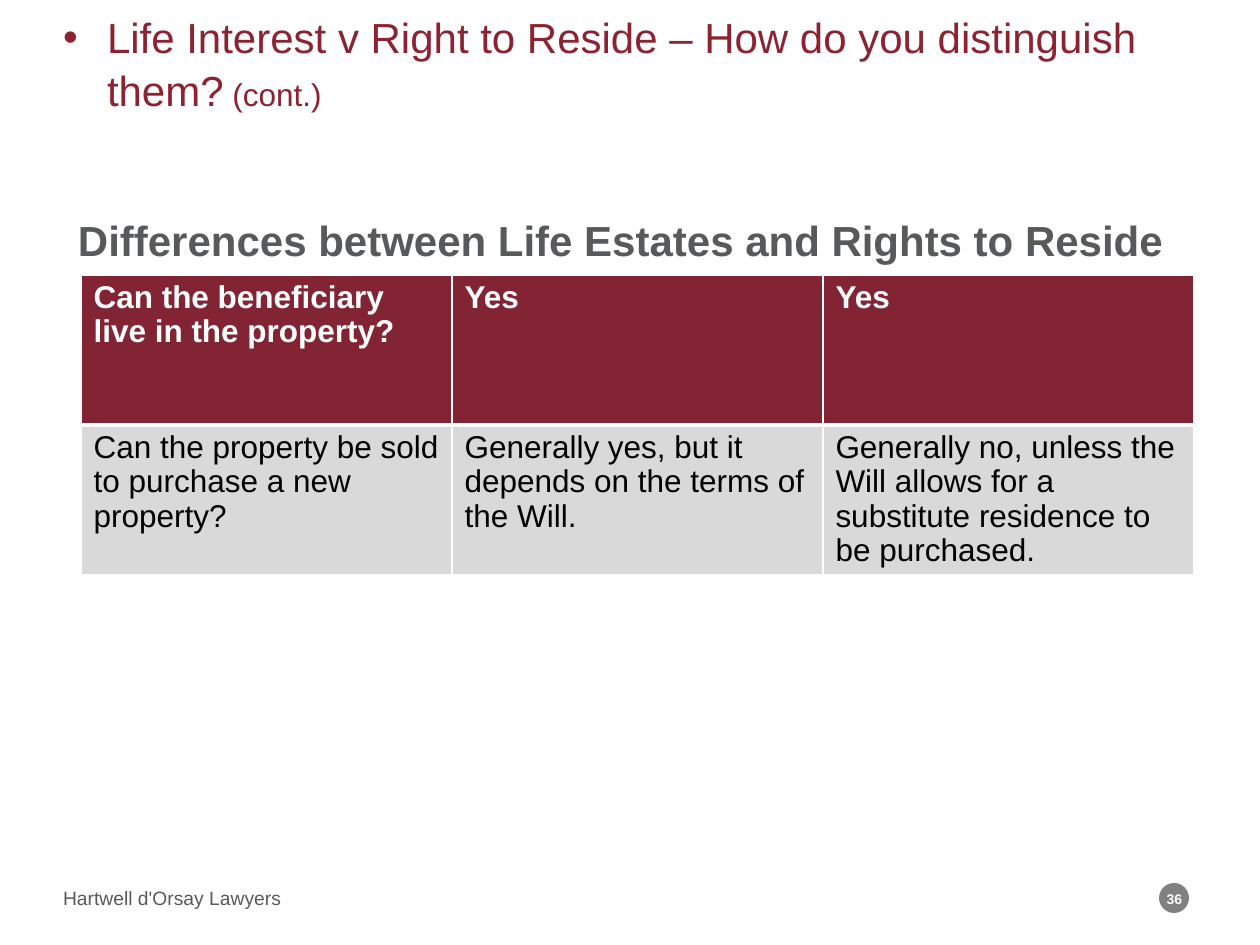
from dataclasses import dataclass

from lxml import etree
from pptx import Presentation
from pptx.dml.color import RGBColor
from pptx.enum.shapes import MSO_SHAPE
from pptx.enum.text import MSO_ANCHOR, MSO_AUTO_SIZE, PP_ALIGN
from pptx.oxml.ns import qn
from pptx.util import Emu, Pt

OVAL = MSO_SHAPE.OVAL
TOP, MIDDLE, BOTTOM = MSO_ANCHOR.TOP, MSO_ANCHOR.MIDDLE, MSO_ANCHOR.BOTTOM
LEFT, CENTER = PP_ALIGN.LEFT, PP_ALIGN.CENTER
NO_AUTOFIT = MSO_AUTO_SIZE.NONE
EMU_PER_PX = 914400 // 126


@dataclass(frozen=True)
class Theme:
    font: str = "Arial"
    title: str = "8B2332"
    header: str = "822433"
    body: str = "D9D9D9"
    grey: str = "58595B"
    badge: str = "808080"
    white: str = "FFFFFF"
    black: str = "000000"
    heading_size: int = 24
    text_size: int = 18
    footer_size: int = 11
    number_size: int = 8
    heading_spacing: float = 1.05
    table_spacing: float = 0.97


THEME = Theme()

TITLE_RUNS = [
    ("Life Interest v Right to Reside – How do you distinguish them?", THEME.heading_size),
    (" (cont.)", THEME.text_size),
]
HEADING = "Differences between Life Estates and Rights to Reside"
FOOTER = "Hartwell d'Orsay Lawyers"
PAGE_NUMBER = "36"
TABLE_ROWS = [
    ("Can the beneficiary live in the property?", "Yes", "Yes"),
    (
        "Can the property be sold to purchase a new property?",
        "Generally yes, but it depends on the terms of the Will.",
        "Generally no, unless the Will allows for a substitute residence to be purchased.",
    ),
]

# left, top, width, height in px
SLIDE_SIZE = (1260, 945)
TITLE_BOX = (63, 29, 1134, 86)
HEADING_BOX = (63, 212, 1134, 607)
FOOTER_BOX = (63, 886, 611, 39)
BADGE_BOX = (1159, 883, 30, 30)
NUMBER_BOX = (1155, 879, 39, 39)
TABLE_LEFT, TABLE_TOP = 81, 275
COLUMN_WIDTH, ROW_HEIGHT = 371, 150
TITLE_INDENT, HEADING_INDENT = 44, 15


def px(value):
    return Emu(value * EMU_PER_PX)


def add_run(paragraph, text, size, color, bold=False):
    run = paragraph.add_run()
    run.text = text
    run.font.name = THEME.font
    run.font.size = Pt(size)
    run.font.bold = bold
    run.font.color.rgb = RGBColor.from_string(color)


def prepare_frame(shape, anchor):
    """Remove insets and autofit, and return the first paragraph."""
    frame = shape.text_frame
    frame.word_wrap = True
    frame.auto_size = NO_AUTOFIT
    frame.vertical_anchor = anchor
    frame.margin_left = frame.margin_top = frame.margin_right = frame.margin_bottom = 0
    return frame.paragraphs[0]


def indent(paragraph, left, first_line=0):
    properties = paragraph._p.get_or_add_pPr()
    properties.set("marL", str(px(left)))
    properties.set("indent", str(px(first_line)))
    return properties


def add_title(slide):
    title = slide.shapes.title
    title.left, title.top, title.width, title.height = map(px, TITLE_BOX)
    paragraph = prepare_frame(title, BOTTOM)
    properties = indent(paragraph, TITLE_INDENT, -TITLE_INDENT)
    etree.SubElement(properties, qn("a:buFont"), typeface=THEME.font)
    etree.SubElement(properties, qn("a:buChar"), char="•")
    paragraph.alignment = LEFT
    paragraph.space_before = Pt(0)
    paragraph.line_spacing = THEME.heading_spacing
    for text, size in TITLE_RUNS:
        add_run(paragraph, text, size, THEME.title)


def add_text(slide, box, text, size, color, bold=False, anchor=TOP, alignment=LEFT):
    shape = slide.shapes.add_textbox(*map(px, box))
    paragraph = prepare_frame(shape, anchor)
    paragraph.alignment = alignment
    add_run(paragraph, text, size, color, bold)
    return paragraph


def add_badge(slide):
    badge = slide.shapes.add_shape(OVAL, *map(px, BADGE_BOX))
    badge.shadow.inherit = False
    badge.fill.solid()
    badge.fill.fore_color.rgb = RGBColor.from_string(THEME.badge)
    badge.line.fill.background()


def set_borders(cell, widths):
    """Draw white borders; widths maps a side tag to points."""
    properties = cell._tc.get_or_add_tcPr()
    for position, (side, width) in enumerate(widths.items()):
        line = etree.Element(qn(f"a:{side}"), w=str(Pt(width)))
        fill = etree.SubElement(line, qn("a:solidFill"))
        etree.SubElement(fill, qn("a:srgbClr"), val=THEME.white)
        properties.insert(position, line)


def add_table(slide):
    row_count, column_count = len(TABLE_ROWS), len(TABLE_ROWS[0])
    box = (TABLE_LEFT, TABLE_TOP, COLUMN_WIDTH * column_count, ROW_HEIGHT * row_count)
    table = slide.shapes.add_table(row_count, column_count, *map(px, box)).table
    for column in table.columns:
        column.width = px(COLUMN_WIDTH)
    for row_index, texts in enumerate(TABLE_ROWS):
        is_header = row_index == 0
        table.rows[row_index].height = px(ROW_HEIGHT)
        fill_color = THEME.header if is_header else THEME.body
        text_color = THEME.white if is_header else THEME.black
        borders = {
            "lnL": 1,
            "lnR": 1,
            "lnT": 1 if is_header else 3,
            "lnB": 3 if is_header else 1,
        }
        for column_index, text in enumerate(texts):
            cell = table.cell(row_index, column_index)
            cell.fill.solid()
            cell.fill.fore_color.rgb = RGBColor.from_string(fill_color)
            set_borders(cell, borders)
            paragraph = cell.text_frame.paragraphs[0]
            paragraph.line_spacing = THEME.table_spacing
            add_run(paragraph, text, THEME.text_size, text_color, is_header)


def main():
    presentation = Presentation()
    presentation.slide_width, presentation.slide_height = map(px, SLIDE_SIZE)
    slide = presentation.slides.add_slide(presentation.slide_layouts[5])
    add_badge(slide)
    add_text(slide, FOOTER_BOX, FOOTER, THEME.footer_size, THEME.grey)
    add_title(slide)
    heading = add_text(slide, HEADING_BOX, HEADING, THEME.heading_size, THEME.grey, bold=True)
    heading.line_spacing = THEME.heading_spacing
    indent(heading, HEADING_INDENT)
    add_text(slide, NUMBER_BOX, PAGE_NUMBER, THEME.number_size, THEME.white,
             bold=True, anchor=MIDDLE, alignment=CENTER)
    add_table(slide)
    presentation.save("out.pptx")


if __name__ == "__main__":
    main()
